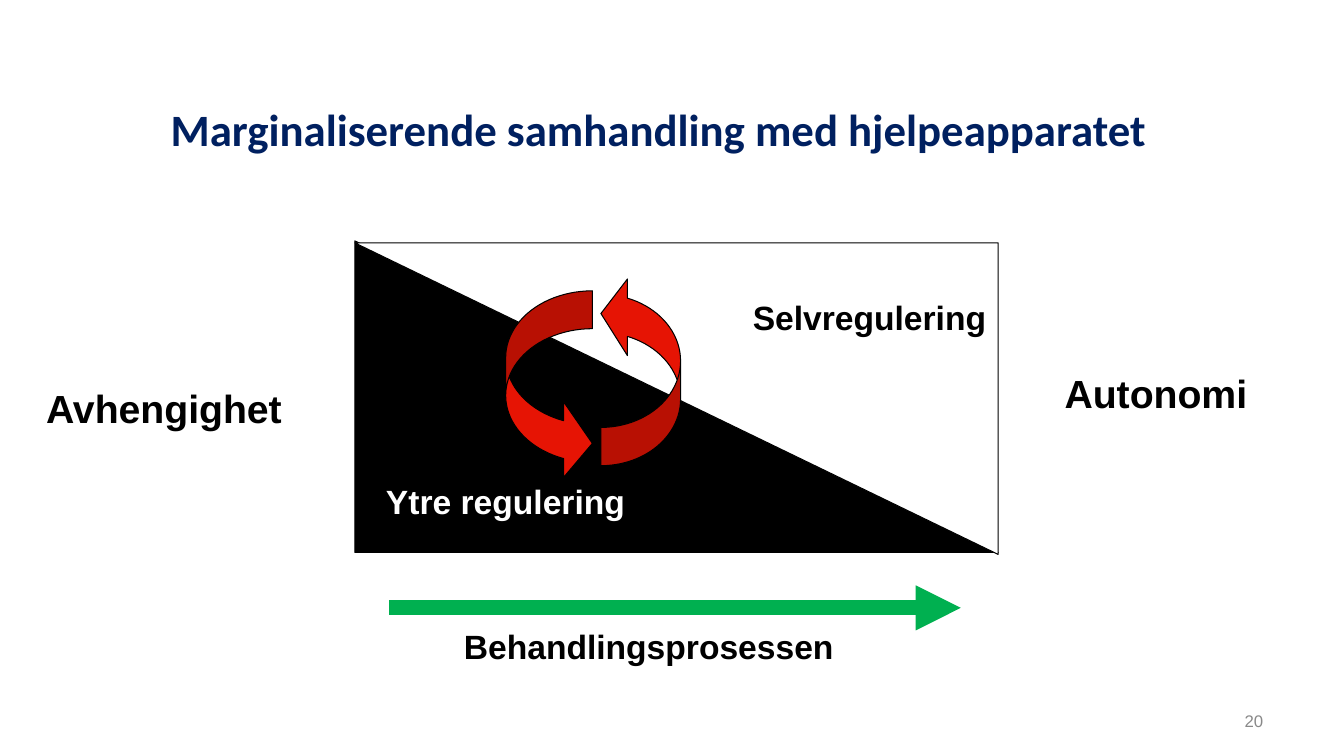
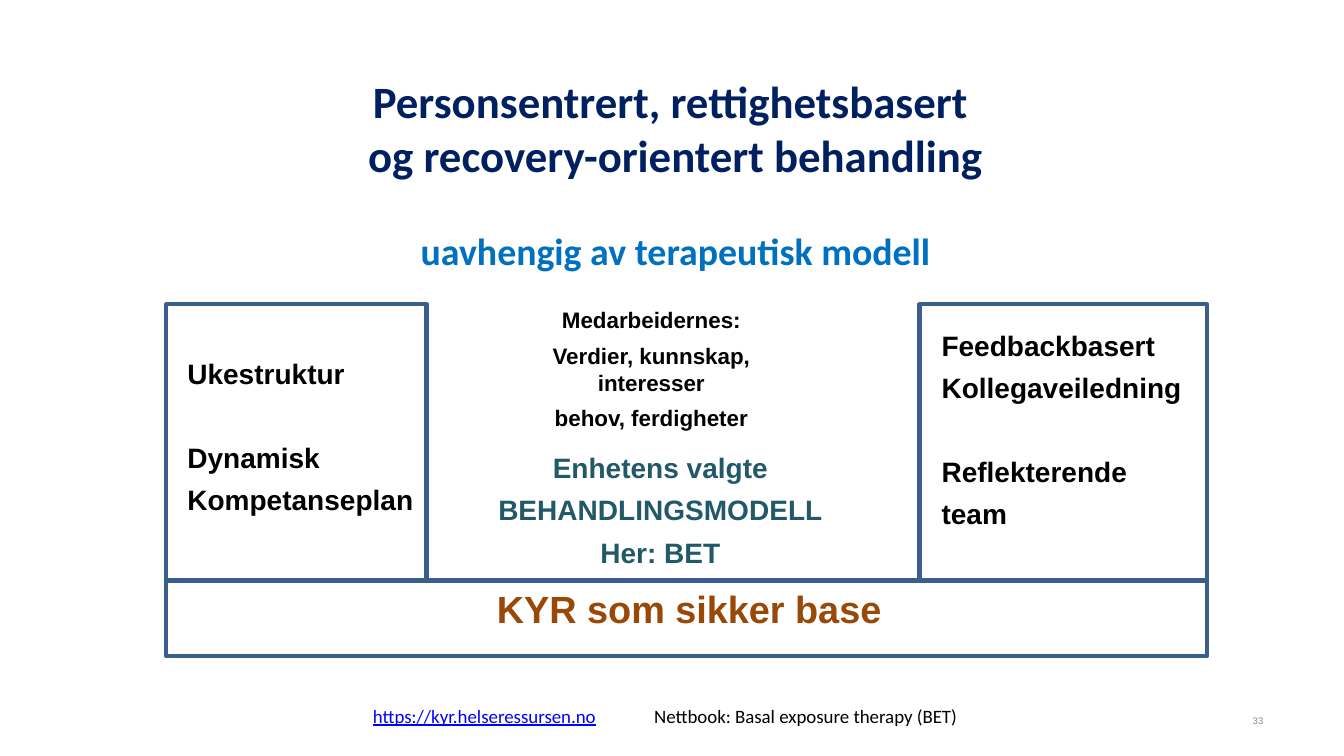
from pptx import Presentation
from pptx.dml.color import RGBColor
from pptx.enum.shapes import MSO_CONNECTOR as Conn, MSO_SHAPE as Shape
from pptx.enum.text import MSO_ANCHOR as Anchor, PP_ALIGN as Align
from pptx.oxml.ns import qn
from pptx.util import Inches, Pt
from lxml.etree import SubElement

# Shared colours and styles
BLACK, WHITE, NAVY, BLUE = "000000", "FFFFFF", "002060", "0070C0"
RED, GREEN, STEEL = "E61404", "00B050", "3A5F8C"
TEAL, BROWN, GREY, LINK = "215968", "984807", "898989", "0000FF"
PAD = (0.14, 0.07)
TITLE = dict(size=32, font="Calibri", color=NAVY, align="c", mid=True, pad=PAD)
BLOCK = dict(size=20, after=6.3)
FOOT = dict(size=13.5, font="Calibri", bold=False)
GAP = 29.3

# Slide 1: title, labels and shapes
HEAD = "Marginaliserende samhandling med hjelpeapparatet"
LABELS = [
    ("Ytre regulering", (3.73, 4.72, 3.15, 0.5), dict(size=24, color=WHITE)),
    ("Selvregulering", (6.73, 2.9, 3.15, 0.5), dict(size=24, align="r")),
    ("Avhengighet", (0.36, 3.53, 2.83, 0.72), dict(size=28, lead=1.5)),
    ("Autonomi", (10.46, 3.61, 2.51, 0.57), dict(size=28)),
    ("Behandlingsprosessen", (4.27, 6.16, 4.33, 0.5), dict(size=24, align="c")),
]
HALVES = [  # box, turn, fill
    ((3.52, 2.39, 6.38, 3.09), 0, BLACK),
    ((3.52, 2.41, 6.38, 3.09), 180, WHITE),
]
LOOPS = [  # box, turn, adjustments
    ((4.5, 3.4, 1.89, 0.86), 90, (0.437, 0.875, 0.333)),
    ((5.41, 3.28, 1.89, 0.79), 270, (0.481, 0.962, 0.333)),
]

# Slide 2: a paragraph is a text, or a text with its own format
GOAL = [
    "Personsentrert, rettighetsbasert ",
    "og recovery-orientert behandling",
    ("uavhengig av terapeutisk modell", dict(size=27, color=BLUE, before=33)),
]
BASE = (1.65, 5.76, 10.32, 0.75)
TALL, LEFT_W, RIGHT_W = 2.74, 2.58, 2.85
PARTS = [
    (["Enhetens valgte", "BEHANDLINGSMODELL", "Her: BET"],
     (4.7, 4.42, 3.7, 1.28), dict(BLOCK, color=TEAL, align="c")),
    (["Ukestruktur", ("Dynamisk", dict(before=GAP)), "Kompetanseplan"],
     (1.76, 3.49, 2.7, 1.7), BLOCK),
    (["Feedbackbasert", "Kollegaveiledning",
      ("Reflekterende", dict(before=GAP)), "team"],
     (9.24, 3.21, 2.8, 2.12), BLOCK),
    (["KYR som sikker base"], (4.83, 5.76, 4.44, 0.56),
     dict(size=27, color=BROWN)),
    (["Medarbeidernes:", "Verdier, kunnskap, interesser", "behov, ferdigheter"],
     (4.9, 2.99, 3.12, 1.35), dict(BLOCK, size=16, align="c")),
    (["https://kyr.helseressursen.no"], (3.6, 6.94, 2.75, 0.49),
     dict(FOOT, color=LINK, under=True)),
    (["Nettbook: Basal exposure therapy (BET)"], (6.39, 6.94, 3.58, 0.49), FOOT),
]

ALIGN = {"l": Align.LEFT, "c": Align.CENTER, "r": Align.RIGHT}


def rgb(code):
    return RGBColor.from_string(code)


def place(box):
    return [Inches(v) for v in box]


def style(par, words, size=20, font="Arial", color=BLACK, bold=True,
          under=False, align="l", before=0, after=0, lead=None):
    par.alignment = ALIGN[align]
    par.space_before, par.space_after = Pt(before), Pt(after)
    if lead:
        par.line_spacing = lead
    run = par.add_run()
    run.text = words
    face = run.font
    face.size, face.name, face.bold, face.underline = Pt(size), font, bold, under
    face.color.rgb = rgb(color)


def text(slide, box, lines, mid=False, pad=(0.1, 0.05), **fmt):
    frame = slide.shapes.add_textbox(*place(box)).text_frame
    frame.word_wrap = True
    frame.vertical_anchor = Anchor.MIDDLE if mid else Anchor.TOP
    frame.margin_left = frame.margin_right = Inches(pad[0])
    frame.margin_top = frame.margin_bottom = Inches(pad[1])
    for i, line in enumerate(lines):
        words, own = (line, {}) if isinstance(line, str) else line
        par = frame.add_paragraph() if i else frame.paragraphs[0]
        style(par, words, **{**fmt, **own})


def draw(slide, kind, box, fill=None, line=BLACK, width=0.75, turn=0, adj=()):
    shape = slide.shapes.add_shape(kind, *place(box))
    shape.shadow.inherit = False
    shape.rotation = turn
    for i, value in enumerate(adj):
        shape.adjustments[i] = value
    if fill:
        shape.fill.solid()
        shape.fill.fore_color.rgb = rgb(fill)
    else:
        shape.fill.background()
    shape.line.color.rgb = rgb(line)
    shape.line.width = Pt(width)


def arrow(slide, start, end, color, width):
    link = slide.shapes.add_connector(Conn.STRAIGHT, *place(start + end))
    link.line.color.rgb = rgb(color)
    link.line.width = Pt(width)
    SubElement(link.line._get_or_add_ln(), qn("a:tailEnd"), type="triangle")
    SubElement(link._element.spPr, qn("a:effectLst"))


def start(deck, box, lines, page, size, **fmt):
    """Add a slide with its title and page number."""
    slide = deck.slides.add_slide(deck.slide_layouts[6])
    text(slide, box, lines, **TITLE, **fmt)
    text(slide, (9.56, 6.95, 3.11, 0.4), [page], size=size, color=GREY,
         bold=False, align="r", mid=True, pad=PAD)
    return slide


def process(deck):
    slide = start(deck, (1.17, 0.71, 10.73, 1.17), [HEAD], "20", 12, lead=Pt(36))
    for box, turn, fill in HALVES:
        draw(slide, Shape.RIGHT_TRIANGLE, box, fill, turn=turn)
    for words, box, fmt in LABELS:
        text(slide, box, [words], **fmt)
    arrow(slide, (3.86, 6.03), (9.53, 6.03), GREEN, 10.75)
    for box, turn, adj in LOOPS:
        draw(slide, Shape.CURVED_UP_ARROW, box, RED, turn=turn, adj=adj)


def model(deck):
    slide = start(deck, (0.91, 1.21, 11.58, 1.02), GOAL, "33", 6.8)
    # Two pillars stand on the ends of the base
    left, top, wide, _ = BASE
    pillars = [(left, LEFT_W), (left + wide - RIGHT_W, RIGHT_W)]
    for box in [BASE] + [(x, top - TALL, w, TALL) for x, w in pillars]:
        draw(slide, Shape.RECTANGLE, box, line=STEEL, width=3)
    for lines, box, fmt in PARTS:
        text(slide, box, lines, **fmt)


def main():
    deck = Presentation()
    deck.slide_width, deck.slide_height = Inches(13.33), Inches(7.5)
    process(deck)
    model(deck)
    deck.save("out.pptx")


if __name__ == "__main__":
    main()
